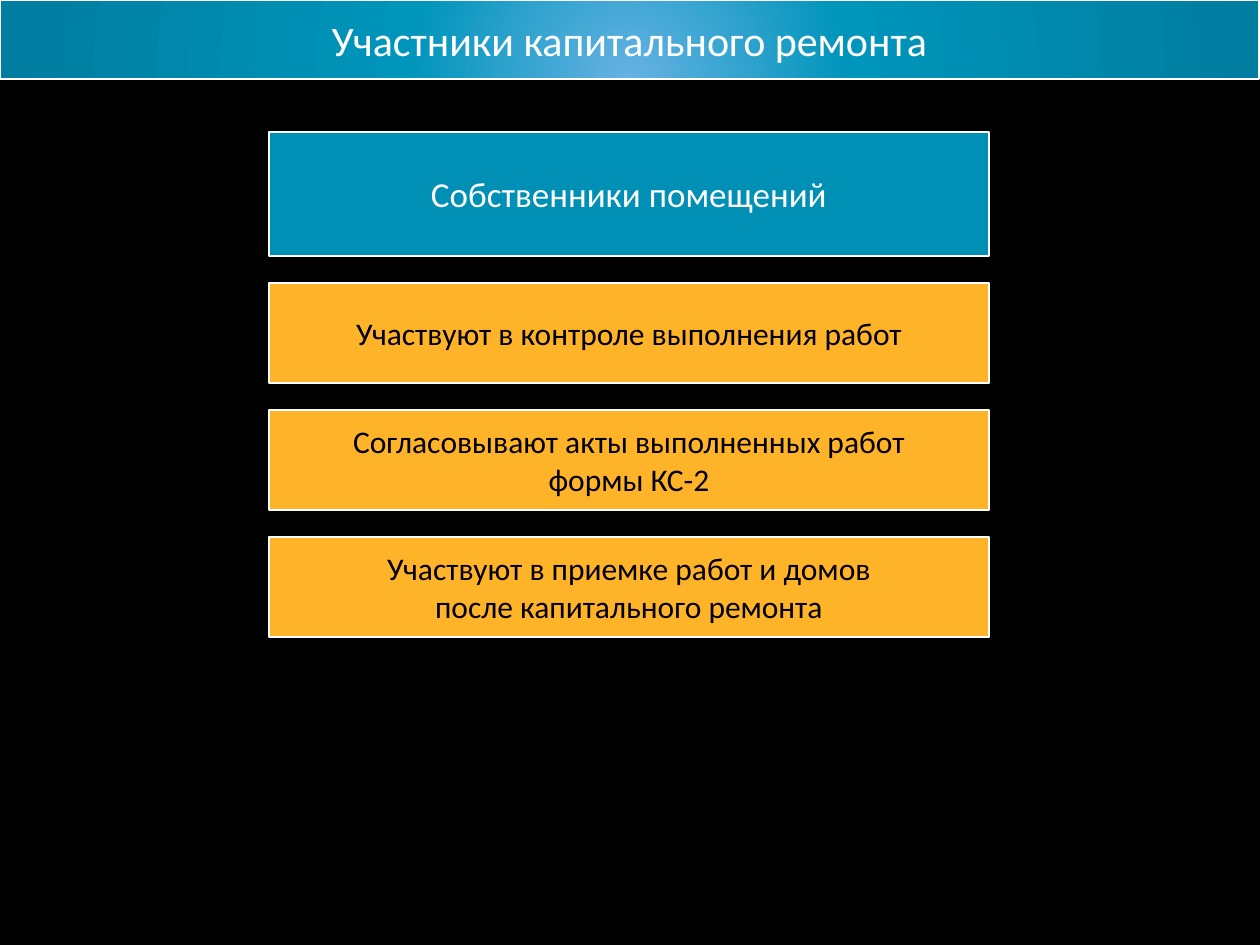
from pptx import Presentation
from pptx.dml.color import RGBColor
from pptx.enum.shapes import MSO_SHAPE
from pptx.enum.text import MSO_ANCHOR, PP_ALIGN
from pptx.oxml import parse_xml
from pptx.oxml.ns import nsdecls
from pptx.util import Pt

TITLE = "Участники капитального ремонта"
OWNERS = "Собственники помещений"
DUTIES = [
    ["Участвуют в контроле выполнения работ"],
    ["Согласовывают акты выполненных работ", "формы КС-2"],
    ["Участвуют в приемке работ и домов", "после капитального ремонта"],
]

BLACK = RGBColor(0x00, 0x00, 0x00)
WHITE = RGBColor(0xFF, 0xFF, 0xFF)
ORANGE = RGBColor(0xFF, 0xB3, 0x29)
BLUE = RGBColor(0x00, 0x8F, 0xB5)
TITLE_STOPS = [
    (0, RGBColor(0x66, 0xB2, 0xE3)),
    (35, RGBColor(0x00, 0x95, 0xBB)),
    (100, RGBColor(0x00, 0x7D, 0xA0)),
]

PX = 914400 // 126
SLIDE_WIDTH, SLIDE_HEIGHT = 1260, 945
TITLE_WIDTH, TITLE_HEIGHT = 1259, 79
BOX_LEFT, BOX_WIDTH = 269, 720
OWNERS_TOP, OWNERS_HEIGHT = 132, 124
DUTY_HEIGHT, GAP = 100, 27


def add_box(slide, lines, left, top, width, height, *, fill, color, size):
    shape = slide.shapes.add_shape(
        MSO_SHAPE.RECTANGLE, left * PX, top * PX, width * PX, height * PX)
    shape.shadow.inherit = False
    shape.fill.solid()
    shape.fill.fore_color.rgb = fill
    shape.line.color.rgb = WHITE
    shape.line.width = Pt(0.75)
    frame = shape.text_frame
    frame.word_wrap = True
    frame.vertical_anchor = MSO_ANCHOR.MIDDLE
    for index, line in enumerate(lines):
        paragraph = frame.add_paragraph() if index else frame.paragraphs[0]
        paragraph.text = line
        paragraph.alignment = PP_ALIGN.CENTER
        paragraph.font.name = "Calibri"
        paragraph.font.size = Pt(size)
        paragraph.font.color.rgb = color
    return shape


def set_radial_fill(shape, stops):
    """Replace the solid fill by a circular gradient from the bottom centre."""
    stop_xml = "".join(
        f'<a:gs pos="{percent * 1000}"><a:srgbClr val="{color}"/></a:gs>'
        for percent, color in stops)
    gradient = parse_xml(
        f'<a:gradFill {nsdecls("a")} rotWithShape="1"><a:gsLst>{stop_xml}</a:gsLst>'
        '<a:path path="circle">'
        '<a:fillToRect l="50000" t="100000" r="50000" b="0"/>'
        '</a:path></a:gradFill>')
    properties = shape._element.spPr
    properties.replace(properties.find("{*}solidFill"), gradient)


def main():
    presentation = Presentation()
    presentation.slide_width = SLIDE_WIDTH * PX
    presentation.slide_height = SLIDE_HEIGHT * PX
    slide = presentation.slides.add_slide(presentation.slide_layouts[6])
    slide.background.fill.solid()
    slide.background.fill.fore_color.rgb = BLACK

    title = add_box(slide, [TITLE], 0, 0, TITLE_WIDTH, TITLE_HEIGHT,
                    fill=BLUE, color=WHITE, size=24)
    set_radial_fill(title, TITLE_STOPS)

    add_box(slide, [OWNERS], BOX_LEFT, OWNERS_TOP, BOX_WIDTH, OWNERS_HEIGHT,
            fill=BLUE, color=WHITE, size=20)
    first_top = OWNERS_TOP + OWNERS_HEIGHT + GAP
    for row, lines in enumerate(DUTIES):
        add_box(slide, lines, BOX_LEFT, first_top + row * (DUTY_HEIGHT + GAP),
                BOX_WIDTH, DUTY_HEIGHT, fill=ORANGE, color=BLACK, size=18)

    presentation.save("out.pptx")


if __name__ == "__main__":
    main()
